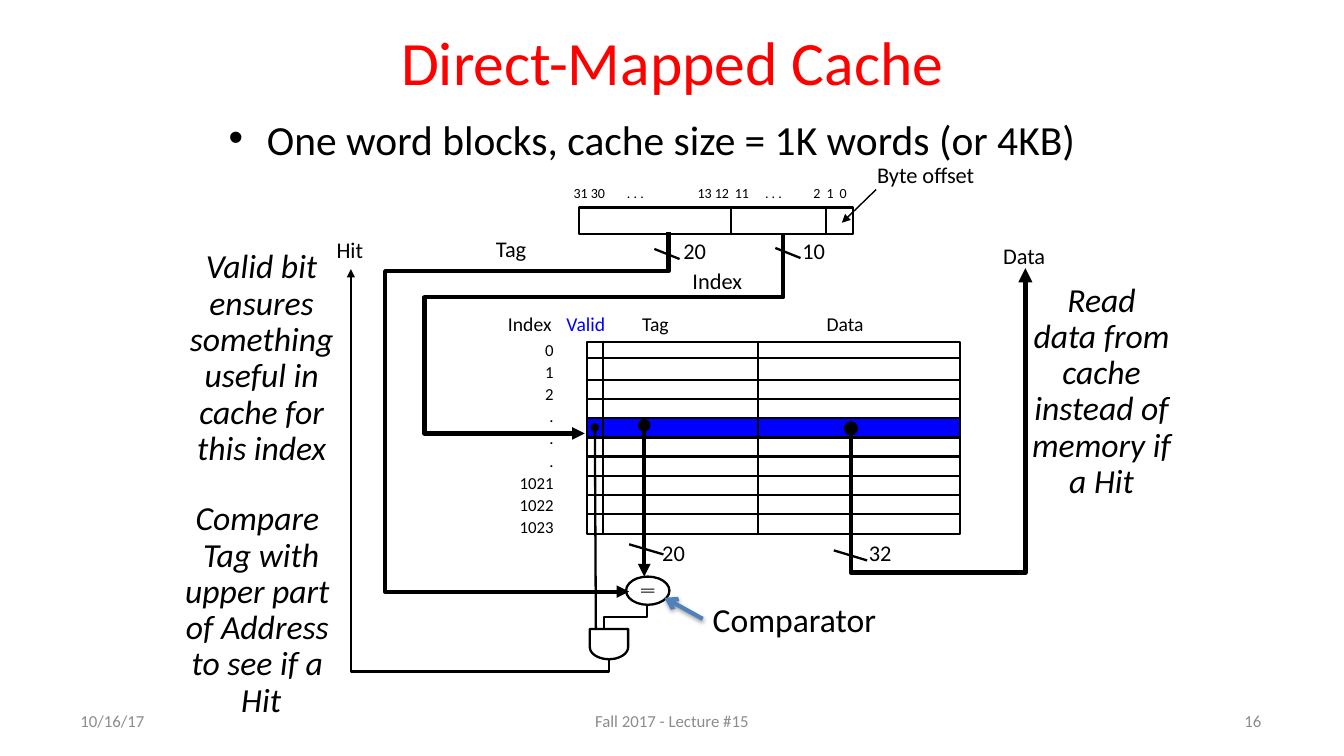
import math

from lxml import etree
from pptx import Presentation
from pptx.dml.color import RGBColor
from pptx.enum.shapes import MSO_CONNECTOR, MSO_SHAPE
from pptx.enum.text import MSO_ANCHOR, PP_ALIGN
from pptx.oxml.ns import qn
from pptx.util import Inches, Pt

BLACK = RGBColor(0x00, 0x00, 0x00)
RED = RGBColor(0xFF, 0x00, 0x00)
BLUE = RGBColor(0x00, 0x00, 0xFF)
STEEL = RGBColor(0x4F, 0x81, 0xBD)
GREY = RGBColor(0x8C, 0x8C, 0x8C)
LEFT, CENTER, RIGHT = PP_ALIGN.LEFT, PP_ALIGN.CENTER, PP_ALIGN.RIGHT
TOP, MIDDLE = MSO_ANCHOR.TOP, MSO_ANCHOR.MIDDLE
STRAIGHT = MSO_CONNECTOR.STRAIGHT
RECT, OVAL = MSO_SHAPE.RECTANGLE, MSO_SHAPE.OVAL
THIN, THICK = 1.63, 3


def add_text(slide, text, box, size, color=BLACK, align=LEFT, anchor=TOP,
             wrap=True, italic=False, spacing=None):
    shape = slide.shapes.add_textbox(*map(Inches, box))
    frame = shape.text_frame
    frame.word_wrap = wrap
    frame.vertical_anchor = anchor
    frame.text = text
    for para in frame.paragraphs:
        para.alignment = align
        if spacing:
            para.line_spacing = spacing
        for run in para.runs:
            run.font.name = "Calibri"
            run.font.size = Pt(size)
            run.font.color.rgb = color
            run.font.italic = italic
    return shape


def add_bullet(para, indent):
    props = para._p.get_or_add_pPr()
    props.set("marL", str(Inches(indent)))
    props.set("indent", str(-Inches(indent)))
    etree.SubElement(props, qn("a:buFont"), typeface="Arial")
    etree.SubElement(props, qn("a:buChar"), char="•")


def add_tabs(para, stops):
    tabs = etree.SubElement(para._p.get_or_add_pPr(), qn("a:tabLst"))
    for stop in stops:
        etree.SubElement(tabs, qn("a:tab"), pos=str(Inches(stop)), algn="l")


def set_line(shape, width, color=BLACK, head=None, tail=None):
    shape.line.color.rgb = color
    shape.line.width = Pt(width)
    ln = shape.element.spPr.find(qn("a:ln"))
    for tag, kind in (("a:headEnd", head), ("a:tailEnd", tail)):
        if kind:
            etree.SubElement(ln, qn(tag), type=kind)


def add_line(slide, start, end, width=THIN, color=BLACK, head=None, tail=None):
    line = slide.shapes.add_connector(STRAIGHT, *map(Inches, start + end))
    set_line(line, width, color, head, tail)
    etree.SubElement(line.element.spPr, qn("a:effectLst"))
    return line


def add_path(slide, points, width=THIN, head=None, tail=None, close=False):
    spots = [(Inches(x), Inches(y)) for x, y in points]
    pen = slide.shapes.build_freeform(*spots[0])
    pen.add_line_segments(spots[1:], close=close)
    path = pen.convert_to_shape()
    path.shadow.inherit = False
    path.fill.background()
    set_line(path, width, BLACK, head, tail)


def add_box(slide, kind, box, fill=None, width=THIN):
    """Add a preset shape, with no fill or no outline where none is given."""
    shape = slide.shapes.add_shape(kind, *map(Inches, box))
    shape.shadow.inherit = False
    if fill is None:
        shape.fill.background()
    else:
        shape.fill.solid()
        shape.fill.fore_color.rgb = fill
    if width:
        set_line(shape, width)
    else:
        shape.line.fill.background()


def add_shadow(line):
    effects = line.element.spPr.find(qn("a:effectLst"))
    shadow = etree.SubElement(effects, qn("a:outerShdw"), blurRad=str(Pt(3.1)),
                              dist=str(Pt(1.6)), dir="5400000", rotWithShape="0")
    color = etree.SubElement(shadow, qn("a:srgbClr"), val=str(BLACK))
    etree.SubElement(color, qn("a:alpha"), val="38000")


def draw_address(slide):
    add_box(slide, RECT, (5.74, 2.06, 2.72, 0.26))
    for x in (7.25, 8.19):
        add_line(slide, (x, 2.06), (x, 2.31))
    bits = add_text(slide, "31 30\t. . .\t13 12\t11\t. . .\t2\t1\t0",
                    (5.59, 1.78, 3.1, 0.27), 10)
    add_tabs(bits.text_frame.paragraphs[0],
             (0.53, 1.23, 1.6, 1.9, 2.38, 2.51, 2.64))
    add_text(slide, "Byte offset", (8.6, 1.55, 1.25, 0.37), 16)
    add_line(slide, (8.69, 1.88), (8.35, 2.21), 1, tail="triangle")


def draw_cache(slide):
    left, right, top, bottom = 5.82, 9.52, 3.39, 5.3
    pitch = 0.19
    rows = [3.77 + pitch * i for i in range(8)]
    hit = rows[2]
    add_box(slide, RECT, (left, top, right - left, bottom - top))
    add_box(slide, RECT, (left, hit, right - left, pitch), BLUE)
    for y in [3.55] + rows:
        add_line(slide, (right, y), (left, y))
    for x in (5.98, 7.52):
        add_line(slide, (x, top), (x, bottom))
    for text, x, width, color in (("Data", 8.1, 0.57, BLACK),
                                  ("Index", 4.94, 0.64, BLACK),
                                  ("Tag", 6.27, 0.47, BLACK),
                                  ("Valid", 5.52, 0.59, BLUE)):
        add_text(slide, text, (x, 3.05, width, 0.34), 14, color, wrap=False)
    add_text(slide, "0\n1\n2\n.\n.\n.\n1021\n1022\n1023", (5.04, 3.3, 0.55, 2.1),
             12, align=RIGHT, wrap=False, spacing=1.1)


def draw_wires(slide):
    add_path(slide, [(6.63, 2.3), (6.63, 2.69), (3.82, 2.69), (3.82, 5.87),
                     (6.24, 5.87)], THICK, tail="triangle")
    add_path(slide, [(7.77, 2.32), (7.77, 2.95), (4.21, 2.95), (4.21, 4.3),
                     (5.8, 4.3)], THICK, tail="triangle")
    add_line(slide, (6.39, 4.22), (6.39, 5.72), THICK, head="oval",
             tail="triangle")
    add_path(slide, [(8.44, 4.25), (8.44, 5.68), (10.17, 5.68), (10.17, 2.66)],
             3.38, head="oval", tail="triangle")
    add_line(slide, (5.9, 4.24), (5.91, 6.24), head="oval")
    add_path(slide, [(6.42, 6), (6.42, 6.12), (5.99, 6.12), (5.99, 6.24)])
    add_path(slide, [(6.04, 6.54), (6.04, 6.66), (3.48, 6.66), (3.48, 2.67)],
             tail="triangle")
    for x, y, width in ((6.49, 2.47, 0.25), (7.69, 2.46, 0.25),
                        (6.24, 5.4, 0.34), (8.27, 5.46, 0.33)):
        add_line(slide, (x, y), (x + width, y + 0.1))
    for text, x, y, width in (("20", 6.68, 2.3, 0.43), ("10", 7.86, 2.3, 0.43),
                              ("20", 6.47, 5.3, 0.43), ("32", 8.52, 5.3, 0.43),
                              ("Tag", 4.82, 2.28, 0.51),
                              ("Index", 6.77, 2.6, 0.7),
                              ("Data", 9.85, 2.35, 0.62),
                              ("Hit", 3.24, 2.29, 0.47)):
        add_text(slide, text, (x, y, width, 0.37), 16, wrap=False)


def draw_gates(slide):
    add_box(slide, OVAL, (6.21, 5.72, 0.43, 0.28))
    for y in (5.84, 5.87):
        add_box(slide, RECT, (6.36, y, 0.13, 0.01), BLACK, width=0)
    turns = [math.pi * i / 20 for i in range(21)]
    bowl = [(6.04 + 0.19 * math.cos(t), 6.42 + 0.12 * math.sin(t))
            for t in turns]
    add_path(slide, [(5.85, 6.24), (6.23, 6.24)] + bowl, close=True)
    label = add_text(slide, "Comparator", (6.97, 5.89, 1.84, 0.5), 24, wrap=False)
    arrow = add_line(slide, (6.97, 6.14), (6.59, 5.93), THICK, STEEL,
                     tail="arrow")
    arrow.begin_connect(label, 1)
    add_shadow(arrow)


def main():
    deck = Presentation()
    deck.slide_width, deck.slide_height = Inches(13.33), Inches(7.5)
    slide = deck.slides.add_slide(deck.slide_layouts[6])
    lead = add_text(slide, "One word blocks, cache size = 1K words (or 4KB)",
                    (2.17, 1.26, 8.83, 0.74), 29.6, spacing=0.6)
    add_bullet(lead.text_frame.paragraphs[0], 0.38)
    add_text(slide, "Direct-Mapped Cache", (2.17, 0.17, 9, 0.87), 44, RED,
             CENTER, MIDDLE)
    draw_cache(slide)
    draw_address(slide)
    draw_wires(slide)
    draw_gates(slide)
    for text, box in (
            ("Valid bit ensures something useful in cache for\vthis index",
             (1.51, 2.43, 2.17, 2.38)),
            ("Compare \vTag with\vupper part \vof Address \vto see if a \vHit",
             (1.38, 4.93, 2.42, 2.24)),
            ("Read\vdata from cache instead of memory if a Hit",
             (10.03, 2.76, 1.79, 3.33))):
        add_text(slide, text, box, 24, align=CENTER, italic=True, spacing=0.9)
    for text, x, width, align in (("10/16/17", 0.7, 2.33, LEFT),
                                  ("Fall 2017 - Lecture #15", 5.08, 3.17, CENTER),
                                  ("16", 10.28, 2.33, RIGHT)):
        add_text(slide, text, (x, 6.95, width, 0.4), 12, GREY, align, MIDDLE)
    deck.save("out.pptx")


if __name__ == "__main__":
    main()
